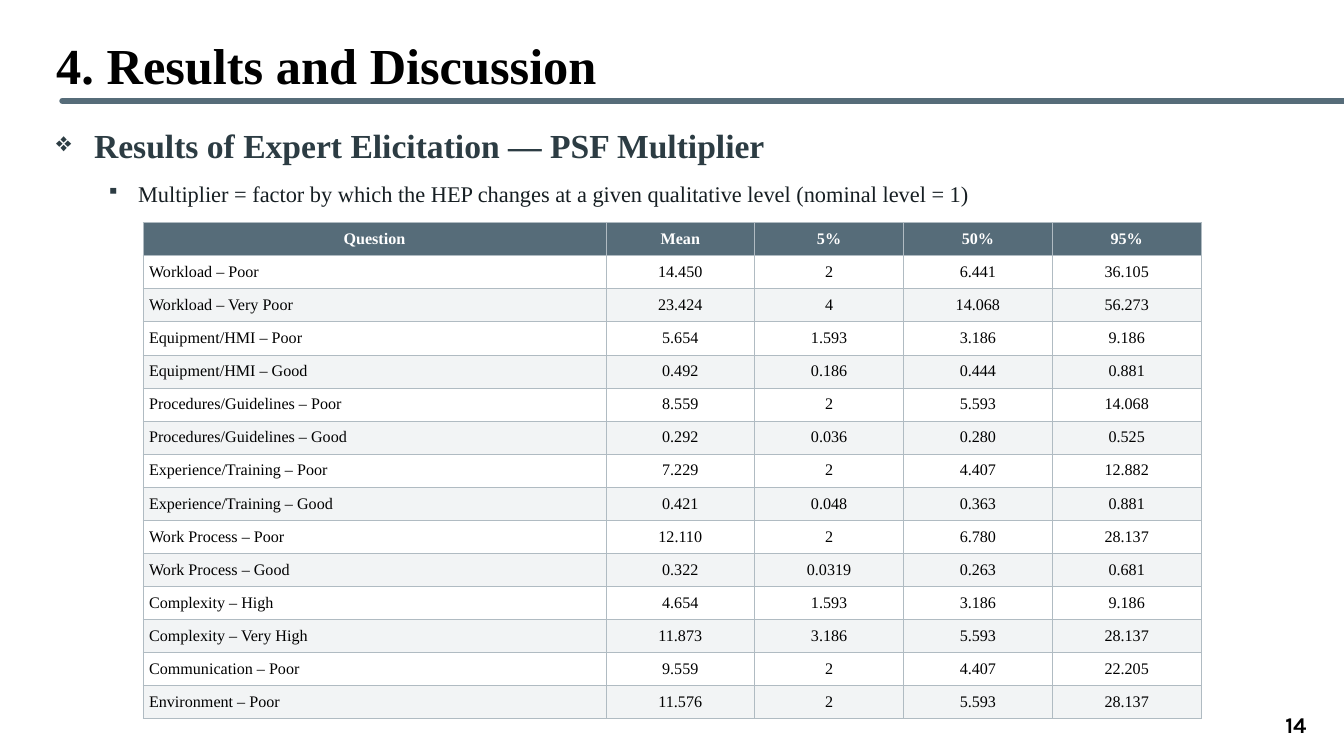
from lxml import etree
from pptx import Presentation
from pptx import util as u
from pptx.dml.color import RGBColor
from pptx.enum import shapes, text
from pptx.oxml import ns

SERIF = "Times New Roman"
SLATE, DARK, INK, BLACK, WHITE = "566C79", "2C3C43", "161E22", "000000", "FFFFFF"
STRIPE, GRID = "F2F4F5", "B0BBC2"
LEFT, CENTER, RIGHT = text.PP_ALIGN.LEFT, text.PP_ALIGN.CENTER, text.PP_ALIGN.RIGHT
MIDDLE = text.MSO_ANCHOR.MIDDLE

HEADER = ("Question", "Mean", "5%", "50%", "95%")
MULTIPLIERS = (
    ("Workload – Poor", "14.450", "2", "6.441", "36.105"),
    ("Workload – Very Poor", "23.424", "4", "14.068", "56.273"),
    ("Equipment/HMI – Poor", "5.654", "1.593", "3.186", "9.186"),
    ("Equipment/HMI – Good", "0.492", "0.186", "0.444", "0.881"),
    ("Procedures/Guidelines – Poor", "8.559", "2", "5.593", "14.068"),
    ("Procedures/Guidelines – Good", "0.292", "0.036", "0.280", "0.525"),
    ("Experience/Training – Poor", "7.229", "2", "4.407", "12.882"),
    ("Experience/Training – Good", "0.421", "0.048", "0.363", "0.881"),
    ("Work Process – Poor", "12.110", "2", "6.780", "28.137"),
    ("Work Process – Good", "0.322", "0.0319", "0.263", "0.681"),
    ("Complexity – High", "4.654", "1.593", "3.186", "9.186"),
    ("Complexity – Very High", "11.873", "3.186", "5.593", "28.137"),
    ("Communication – Poor", "9.559", "2", "4.407", "22.205"),
    ("Environment – Poor", "11.576", "2", "5.593", "28.137"),
)


def color(value):
    return RGBColor.from_string(value)


def add_xml(parent, tag, **attributes):
    child = etree.SubElement(parent, ns.qn(tag))
    for name, value in attributes.items():
        child.set(name, str(value))
    return child


def write(para, words, size=16, font=SERIF, ink=BLACK, bold=False, align=LEFT):
    para.alignment = align
    span = para.add_run()
    span.text = words
    span.font.size = u.Pt(size)
    span.font.name = font
    span.font.bold = bold
    span.font.color.rgb = color(ink)


def add_box(page, left, top, width, height, anchor=MIDDLE):
    box = page.shapes.add_textbox(u.Pt(left), u.Pt(top), u.Pt(width), u.Pt(height))
    frame = box.text_frame
    frame.word_wrap = True
    frame.vertical_anchor = anchor
    return frame


def add_bullet(para, mark, indent, hang, level=0):
    para.level = level
    props = para._p.get_or_add_pPr()
    props.set("marL", str(u.Pt(indent)))
    props.set("indent", str(-u.Pt(hang)))
    add_xml(add_xml(props, "a:buClr"), "a:srgbClr", val=DARK)
    add_xml(props, "a:buSzPct", val=80000)
    add_xml(props, "a:buChar", char=mark)


def add_rule(page, left, right, y):
    rule = page.shapes.add_connector(
        shapes.MSO_CONNECTOR.STRAIGHT, u.Pt(left), u.Pt(y), u.Pt(right), u.Pt(y))
    rule.line.color.rgb = color(SLATE)
    rule.line.width = u.Pt(4.5)
    rule.line._ln.set("cap", "rnd")
    add_xml(rule._element.spPr, "a:effectLst")


def style_cell(cell, fill):
    cell.vertical_anchor = MIDDLE
    cell.margin_left = cell.margin_right = u.Pt(4.3)
    cell.margin_top = cell.margin_bottom = u.Pt(1.4)
    props = cell._tc.get_or_add_tcPr()
    for side in "LRTB":
        border = add_xml(props, f"a:ln{side}", w=u.Pt(0.5))
        add_xml(add_xml(border, "a:solidFill"), "a:srgbClr", val=GRID)
    cell.fill.solid()
    cell.fill.fore_color.rgb = color(fill)


def add_multiplier_table(page, left, top, widths, row_height):
    rows = (HEADER,) + MULTIPLIERS
    frame = page.shapes.add_table(
        len(rows), len(widths), u.Pt(left), u.Pt(top),
        u.Pt(sum(widths)), u.Pt(row_height * len(rows)))
    table = frame.table
    for column, width in zip(table.columns, widths):
        column.width = u.Pt(width)
    for r, values in enumerate(rows):
        table.rows[r].height = u.Pt(row_height)
        head = r == 0
        fill = SLATE if head else (STRIPE, WHITE)[r % 2]
        for c, value in enumerate(values):
            cell = table.cell(r, c)
            style_cell(cell, fill)
            write(cell.text_frame.paragraphs[0], value, size=11.5, bold=head,
                  ink=WHITE if head else BLACK,
                  align=CENTER if head or c else LEFT)


def main():
    deck = Presentation()
    deck.slide_width, deck.slide_height = u.Pt(960), u.Pt(540)
    page = deck.slides.add_slide(deck.slide_layouts[6])

    # Title and rule
    add_rule(page, 44.6, 960, 72)
    title = add_box(page, 33.1, 15.8, 907.2, 60.5)
    write(title.paragraphs[0], "4. Results and Discussion", size=36, bold=True)

    # Bulleted introduction
    intro = add_box(page, 33.1, 83.5, 907.2, 70.6, anchor=text.MSO_ANCHOR.TOP)
    intro.margin_top = u.Pt(6)
    heading = intro.paragraphs[0]
    add_bullet(heading, "❖", 27, 27)
    write(heading, "Results of Expert Elicitation — PSF Multiplier",
          size=24, ink=DARK, bold=True)
    detail = intro.add_paragraph()
    add_bullet(detail, "▪", 58.5, 22.5, level=1)
    detail.space_before = u.Pt(10)
    write(detail, "Multiplier = factor by which the HEP changes at a given "
          "qualitative level (nominal level = 1)", ink=INK)

    # Multiplier table
    add_multiplier_table(page, 102.2, 159, [330.6] + [106.3] * 4, 23.63)

    # Page number
    number = add_box(page, 886.3, 503.3, 54, 28.8)
    write(number.paragraphs[0], "14", font="Karla", bold=True, align=RIGHT)

    deck.save("out.pptx")


if __name__ == "__main__":
    main()
